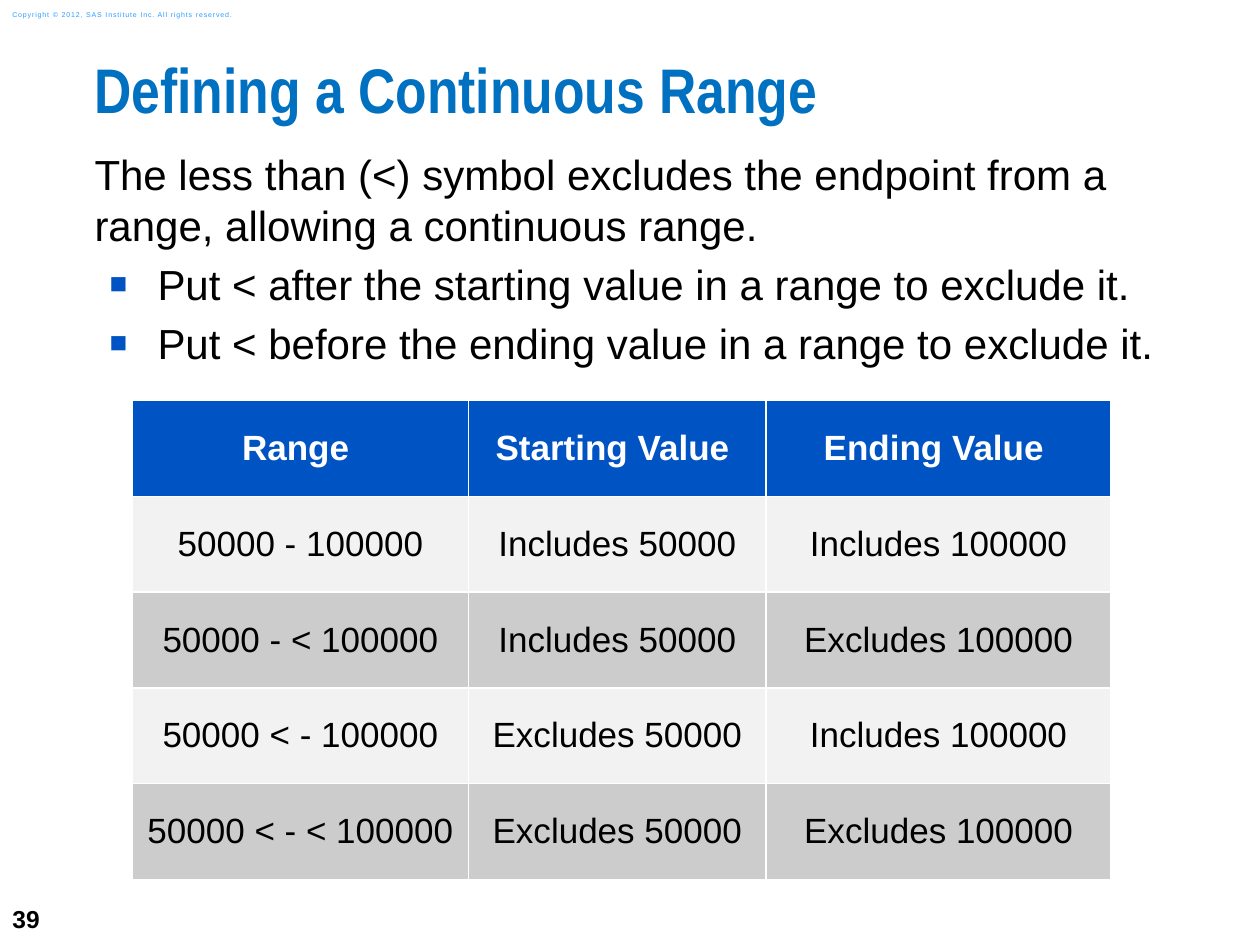
from lxml.etree import SubElement
from pptx import Presentation
from pptx.dml.color import RGBColor
from pptx.enum.text import MSO_ANCHOR as Anchor, PP_ALIGN as Align
from pptx.oxml.ns import qn
from pptx.util import Inches, Pt

BLUE, BLACK, WHITE = "0053C3", "000000", "FFFFFF"
BODY_LINES = [
    "The less than (<) symbol excludes the endpoint from a range, allowing a continuous range.",
    "Put < after the starting value in a range to exclude it.",
    "Put < before the ending value in a range to exclude it.",
]
RANGE_ROWS = [
    ("Range ", "Starting Value ", "Ending Value "),
    ("50000 - 100000", "Includes 50000", "Includes 100000"),
    ("50000 - < 100000", "Includes 50000", "Excludes 100000"),
    ("50000 < - 100000", "Excludes 50000", "Includes 100000"),
    ("50000 < - < 100000", "Excludes 50000", "Excludes 100000"),
]
COLUMN_WIDTHS = (2.67, 2.36, 2.74)
ROW_HEIGHT = 0.76


def rgb(color):
    return RGBColor.from_string(color)


def write(p, text, size=24, color=BLACK, bold=False, font="Arial",
          align=None, tracking=None):
    p.alignment = align
    r = p.add_run()
    r.text = text
    r.font.name, r.font.size, r.font.bold = font, Pt(size), bold
    r.font.color.rgb = rgb(color)
    if tracking:
        r.font._element.set("spc", str(int(tracking * 100)))


def add_text_frame(slide, left, top, width, height, inset=(0, 0),
                   anchor=Anchor.TOP, wrap=True):
    sp = slide.shapes.add_textbox(*map(Inches, (left, top, width, height)))
    tf = sp.text_frame
    tf.word_wrap, tf.vertical_anchor = wrap, anchor
    tf.margin_left = tf.margin_right = Inches(inset[0])
    tf.margin_top = tf.margin_bottom = Inches(inset[1])
    return tf


def add_bullet(p):
    pPr = p._p.get_or_add_pPr()
    pPr.set("marL", str(Inches(0.5)))
    pPr.set("indent", str(Inches(-0.38)))
    SubElement(SubElement(pPr, qn("a:buClr")), qn("a:srgbClr"), val=BLUE)
    SubElement(pPr, qn("a:buSzPct"), val="70000")
    SubElement(pPr, qn("a:buFont"), typeface="Arial")
    SubElement(pPr, qn("a:buChar"), char="■")


def add_body(slide):
    tf = add_text_frame(slide, 0.75, 1.18, 8.58, 1.9)
    for i, line in enumerate(BODY_LINES):
        p = tf.paragraphs[0] if i == 0 else tf.add_paragraph()
        if i:
            add_bullet(p)
        p.space_after = Pt(5)
        write(p, line)


def set_borders(cell):
    tcPr = cell._tc.get_or_add_tcPr()
    for side in ("lnL", "lnR", "lnT", "lnB"):
        ln = SubElement(tcPr, qn(f"a:{side}"), w=str(Pt(1)))
        SubElement(SubElement(ln, qn("a:solidFill")), qn("a:srgbClr"), val=WHITE)


def fill_cell(cell, text, fill, color, bold):
    set_borders(cell)
    cell.fill.solid()
    cell.fill.fore_color.rgb = rgb(fill)
    cell.vertical_anchor = Anchor.MIDDLE
    cell.margin_left = cell.margin_right = Inches(0.1)
    cell.margin_top = cell.margin_bottom = Inches(0.1)
    write(cell.text_frame.paragraphs[0], text, size=20, color=color,
          bold=bold, align=Align.CENTER)


def add_range_table(slide):
    rows, cols = len(RANGE_ROWS), len(COLUMN_WIDTHS)
    table = slide.shapes.add_table(
        rows, cols, Inches(1.05), Inches(3.18),
        Inches(sum(COLUMN_WIDTHS)), Inches(rows * ROW_HEIGHT)).table
    for column, width in zip(table.columns, COLUMN_WIDTHS):
        column.width = Inches(width)
    for i, texts in enumerate(RANGE_ROWS):
        table.rows[i].height = Inches(ROW_HEIGHT)
        header = i == 0
        fill = BLUE if header else ("CCCCCC", "F2F2F2")[i % 2]
        for j, text in enumerate(texts):
            fill_cell(table.cell(i, j), text, fill,
                      WHITE if header else BLACK, header)


def main():
    prs = Presentation()
    prs.slide_width, prs.slide_height = Inches(10), Inches(7.5)
    slide = prs.slides.add_slide(prs.slide_layouts[6])

    # Page number and copyright line
    tf = add_text_frame(slide, 0, 7.08, 0.58, 0.42, (0.1, 0.05), Anchor.MIDDLE, False)
    write(tf.paragraphs[0], "39", size=14, bold=True)
    tf = add_text_frame(slide, 0, 0.03, 2.11, 0.17, (0.1, 0.05), Anchor.MIDDLE)
    write(tf.paragraphs[0], "Copyright © 2012, SAS Institute Inc. All rights reserved.",
          size=4, color="2A9CFF", tracking=0.5)

    # Title
    p = add_text_frame(slide, 0.75, 0.5, 9.25, 0.74).paragraphs[0]
    p.line_spacing = 0.83
    write(p, "Defining a Continuous Range", size=36, color="0070C0",
          bold=True, font="Arial Narrow")

    # Explanation and table of ranges
    add_body(slide)
    add_range_table(slide)
    prs.save("out.pptx")


if __name__ == "__main__":
    main()
